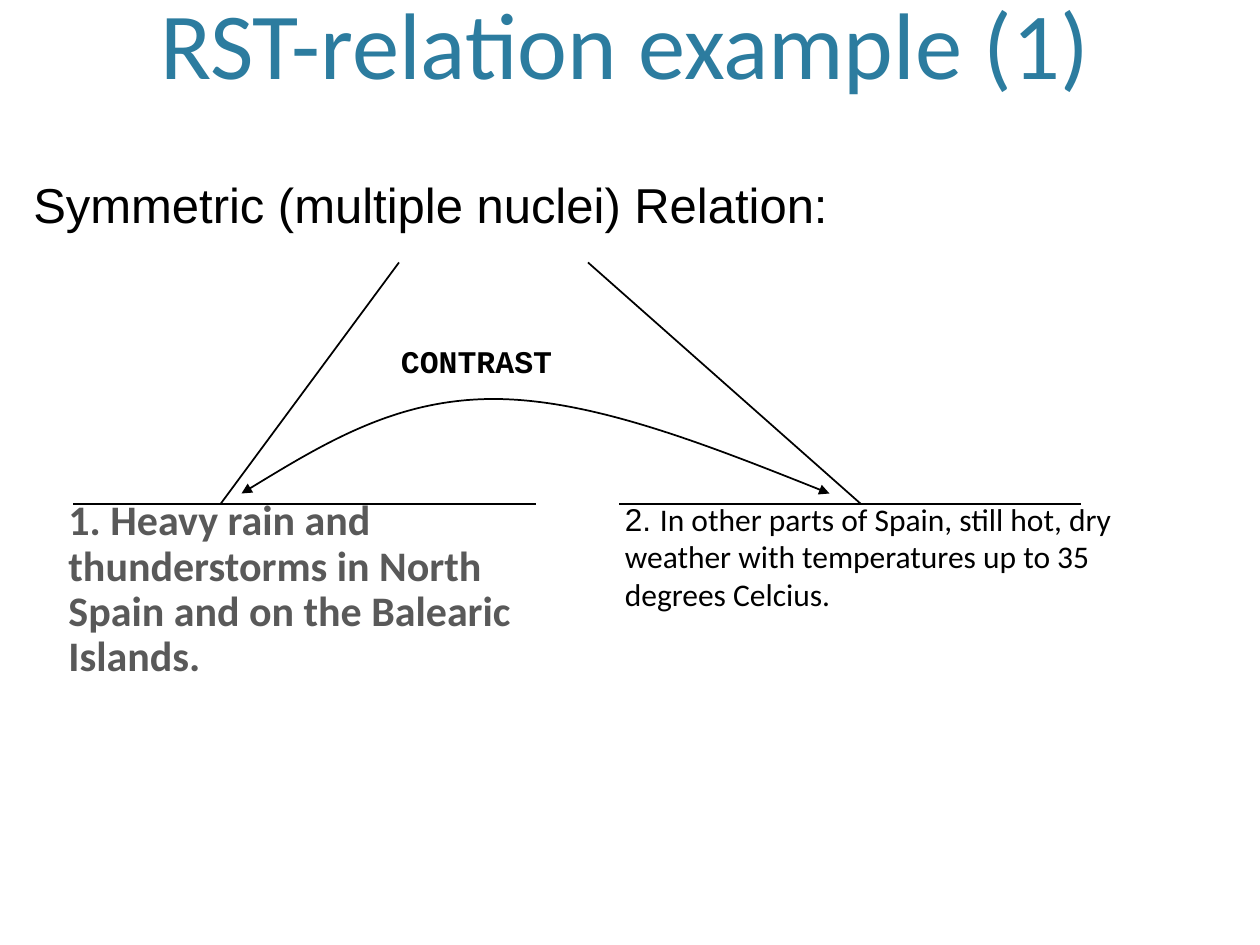
"""Builds a slide on a symmetric relation between two text spans."""
from dataclasses import dataclass

from lxml.etree import SubElement
from pptx import Presentation
from pptx.dml.color import RGBColor
from pptx.enum.text import MSO_ANCHOR, PP_ALIGN
from pptx.enum.shapes import MSO_CONNECTOR
from pptx.oxml.ns import qn
from pptx.util import Inches, Pt


@dataclass(frozen=True)
class Theme:
    blue: RGBColor = RGBColor.from_string("2C7C9F")
    grey: RGBColor = RGBColor.from_string("595959")
    black: RGBColor = RGBColor.from_string("000000")
    body_font: str = "Calibri"
    plain_font: str = "Arial"
    label_font: str = "Courier New"
    title_size: int = 54
    heading_size: int = 28
    nucleus_size: int = 24
    text_size: int = 18
    line_width: int = 1


class RelationSlide:
    COLUMNS, ROWS = 120, 90

    def __init__(self, presentation, theme):
        self.theme = theme
        self.column = presentation.slide_width // self.COLUMNS
        self.row = presentation.slide_height // self.ROWS
        self.slide = presentation.slides.add_slide(presentation.slide_layouts[6])

    def place(self, column, row):
        return round(column * self.column), round(row * self.row)

    def text(self, position, size, runs, points, color, bold=False, indent=0,
             spacing=None, align=PP_ALIGN.LEFT, anchor=MSO_ANCHOR.TOP):
        box = self.slide.shapes.add_textbox(*self.place(*position), *self.place(*size))
        frame = box.text_frame
        frame.word_wrap = True
        frame.vertical_anchor = anchor
        frame.margin_left = Inches(0.1 + indent)
        paragraph = frame.paragraphs[0]
        paragraph.alignment = align
        paragraph.line_spacing = spacing
        for words, font_name in runs:
            run = paragraph.add_run()
            run.text = words
            run.font.name = font_name
            run.font.size = Pt(points)
            run.font.bold = bold
            run.font.color.rgb = color

    def style_line(self, shape):
        shape.line.color.rgb = self.theme.black
        shape.line.width = Pt(self.theme.line_width)

    def line(self, start, end):
        connector = self.slide.shapes.add_connector(
            MSO_CONNECTOR.STRAIGHT, *self.place(*start), *self.place(*end))
        self.style_line(connector)
        SubElement(connector._element.spPr, qn("a:effectLst"))

    def curve(self, start, *points):
        builder = self.slide.shapes.build_freeform(*self.place(*start))
        builder.add_line_segments([self.place(*point) for point in points], close=False)
        shape = builder.convert_to_shape()
        shape.shadow.inherit = False
        shape.fill.background()
        self.style_line(shape)
        outline = shape._element.find(".//" + qn("a:path"))
        segments = outline.findall(qn("a:lnTo"))
        for first in range(0, len(segments), 3):
            bezier = SubElement(outline, qn("a:cubicBezTo"))
            for segment in segments[first:first + 3]:
                bezier.append(segment[0])
                outline.remove(segment)
        for tag in ("a:headEnd", "a:tailEnd"):
            SubElement(shape.line._get_or_add_ln(), qn(tag), type="triangle")


def main():
    presentation = Presentation()
    presentation.slide_width, presentation.slide_height = Inches(10), Inches(7.5)
    theme = Theme()
    slide = RelationSlide(presentation, theme)

    slide.text((2, 2), (115, 8), [("RST-relation example (1)", theme.body_font)],
               theme.title_size, theme.blue,
               align=PP_ALIGN.CENTER, anchor=MSO_ANCHOR.BOTTOM)
    slide.text((4, 47), (51, 23),
               [("1. Heavy rain and thunderstorms in North Spain and on the "
                 "Balearic Islands.", theme.body_font)],
               theme.nucleus_size, theme.grey, bold=True, indent=0.11, spacing=0.9)
    slide.text((57, 47), (53, 22),
               [("2. ", theme.plain_font),
                ("In other parts of Spain, still hot, dry weather with "
                 "temperatures up to 35 degrees Celcius.", theme.body_font)],
               theme.text_size, theme.black, indent=0.11)
    for left in (7, 59):
        slide.line((left, 48), (left + 44, 48))
    slide.curve((23, 47), (30.4, 42.5), (37.7, 38), (47, 38),
                (56.3, 38), (67.7, 42.5), (79, 47))
    slide.text((37, 32), (24, 6), [("CONTRAST", theme.label_font)],
               theme.text_size, theme.black, bold=True)
    slide.text((2, 16), (106, 6.8),
               [("Symmetric (multiple nuclei) Relation:", theme.plain_font)],
               theme.heading_size, theme.black)
    for top, foot in ((56, 82), (38, 21)):
        slide.line((top, 25), (foot, 48))

    presentation.save("out.pptx")


if __name__ == "__main__":
    main()
